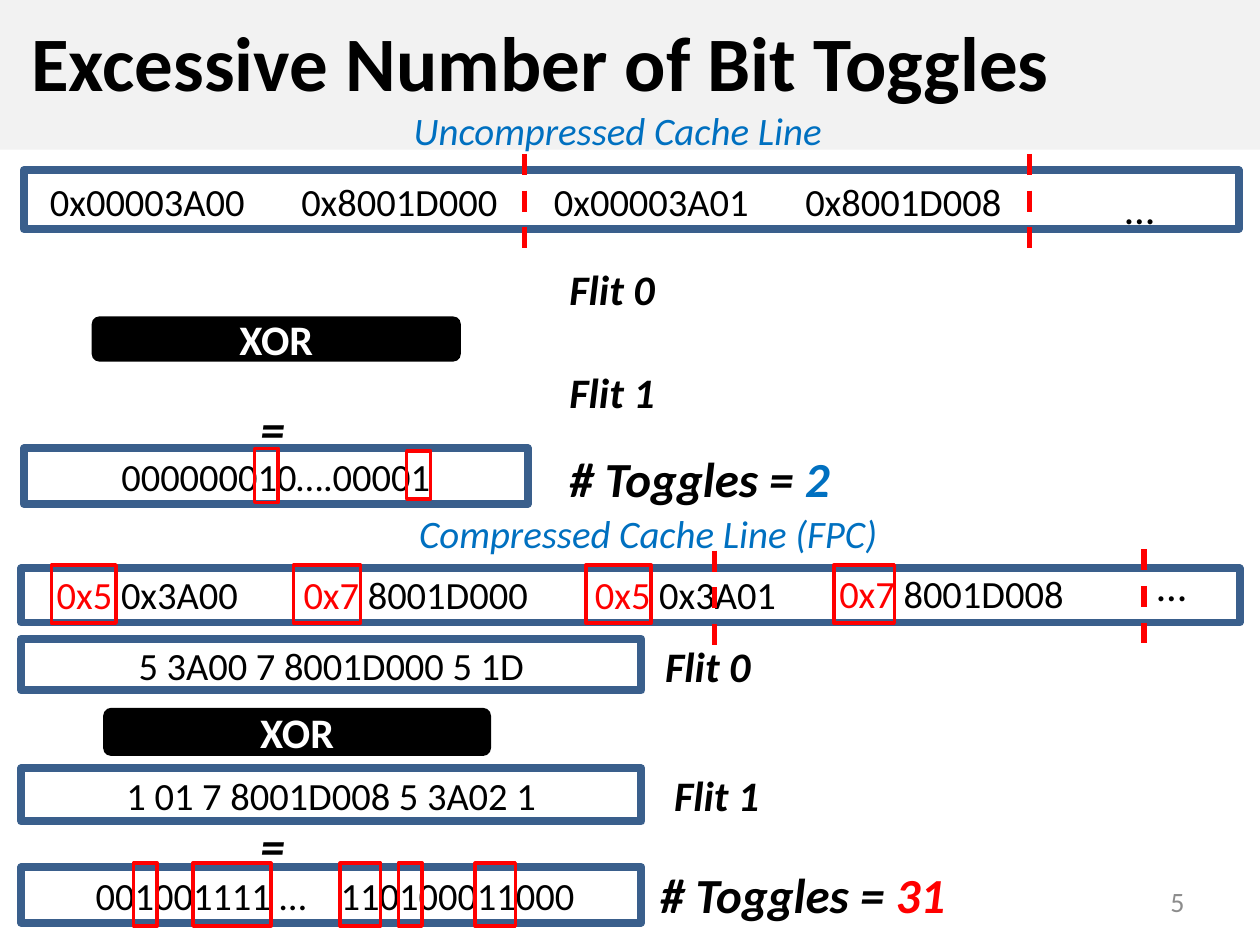
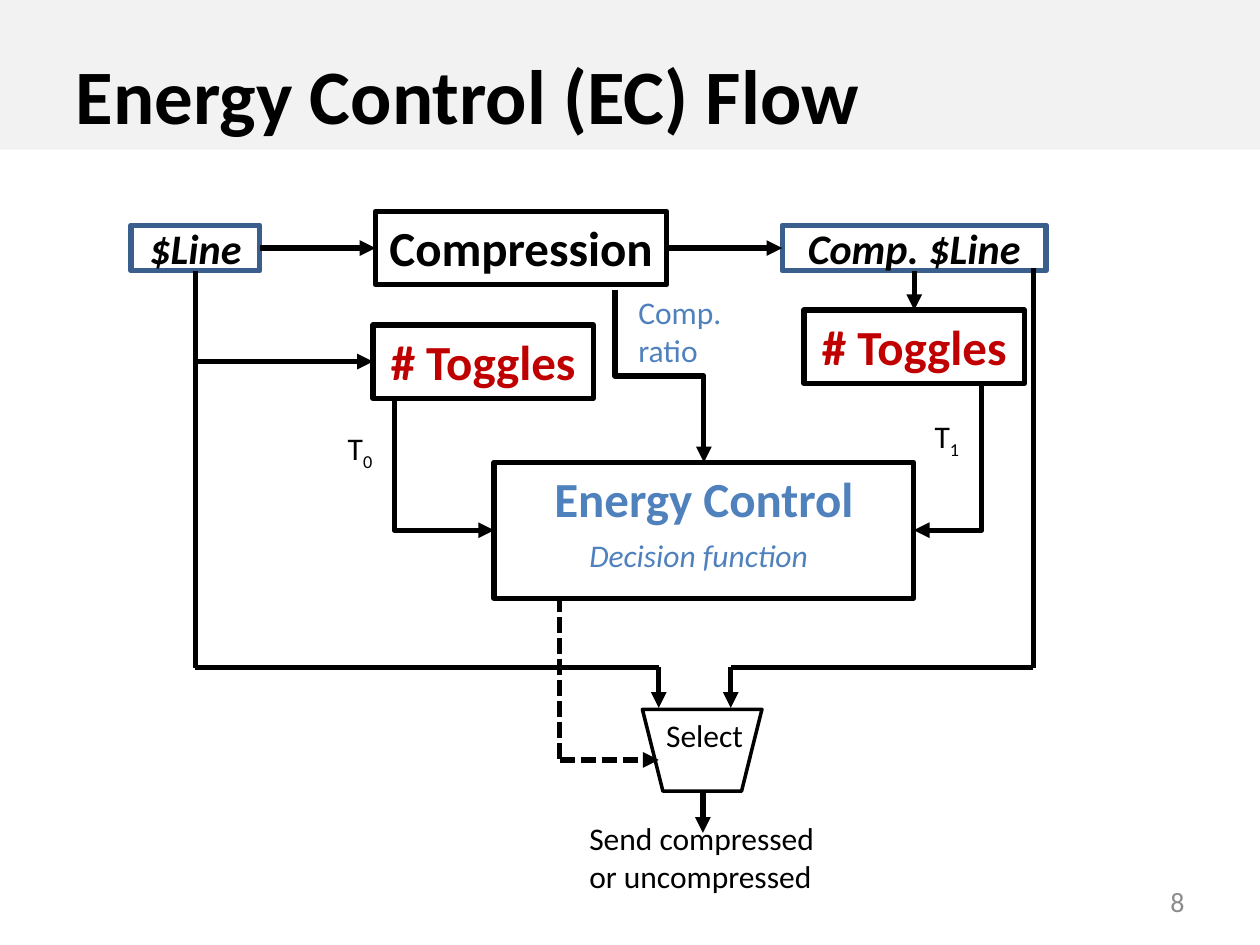
from dataclasses import dataclass, replace
from typing import NamedTuple

from lxml.etree import SubElement
from pptx import Presentation
from pptx.dml.color import RGBColor
from pptx.enum.dml import MSO_LINE
from pptx.enum.shapes import MSO_CONNECTOR, MSO_SHAPE
from pptx.enum.text import MSO_ANCHOR, MSO_AUTO_SIZE, PP_ALIGN
from pptx.oxml.ns import qn
from pptx.util import Cm, Pt

BLACK = RGBColor(0, 0, 0)
WHITE = RGBColor(0xFF, 0xFF, 0xFF)
PALE = RGBColor(0xF2, 0xF2, 0xF2)
GREY = RGBColor(0x8C, 0x8C, 0x8C)
NAVY = RGBColor(0x3A, 0x5F, 0x8C)
BLUE = RGBColor(0x00, 0x70, 0xC0)
STEEL = RGBColor(0x4F, 0x81, 0xBD)
RED = RGBColor(0xFF, 0, 0)
DARK_RED = RGBColor(0xC0, 0, 0)
FONT = "Calibri"


class Run(NamedTuple):
    text: str
    color: RGBColor | None = None
    sub: bool = False


class Area(NamedTuple):
    """Left, top, width and height in centimetres."""
    x: float
    y: float
    w: float
    h: float


@dataclass(frozen=True)
class Style:
    size: float
    color: RGBColor = BLACK
    bold: bool = False
    ital: bool = False
    align: PP_ALIGN = PP_ALIGN.LEFT
    anchor: MSO_ANCHOR = MSO_ANCHOR.TOP
    before: float = 0


@dataclass(frozen=True)
class Look:
    line: RGBColor | None = None
    width: float = 3
    fill: RGBColor | None = None
    kind: MSO_SHAPE = MSO_SHAPE.RECTANGLE


MID = {"align": PP_ALIGN.CENTER, "anchor": MSO_ANCHOR.MIDDLE}
TITLE = Style(44, bold=True, anchor=MSO_ANCHOR.MIDDLE)
PAGE = Style(16, GREY, align=PP_ALIGN.RIGHT, anchor=MSO_ANCHOR.MIDDLE)
WORD = Style(22, **MID)
DOTS = Style(24, **MID)
GATE = Style(24, WHITE, bold=True, **MID)
FLIT = Style(24, bold=True, ital=True)
SUM = replace(FLIT, size=28)
HEAD = Style(22.2, BLUE, ital=True, before=4.4)
ITEM = Style(24, bold=True, ital=True, **MID)
STEP = Style(28, bold=True, align=PP_ALIGN.CENTER)
NOTE = Style(18)

FRAME = Look(NAVY, 4.5)
MARK = Look(RED, 2)
PILL = Look(fill=BLACK, kind=MSO_SHAPE.ROUNDED_RECTANGLE)
DATA = Look(NAVY)
STAGE = Look(BLACK, fill=WHITE)
MUX = Look(BLACK, 2, WHITE, MSO_SHAPE.TRAPEZOID)


# Text
def write(frame, paras: list[list[Run]], style: Style) -> None:
    frame.vertical_anchor = style.anchor
    for num, runs in enumerate(paras):
        para = frame.add_paragraph() if num else frame.paragraphs[0]
        para.alignment = style.align
        para.space_before = Pt(style.before)
        for part in runs:
            run = para.add_run()
            run.text = part.text
            font = run.font
            font.name, font.size = FONT, Pt(style.size)
            font.bold, font.italic = style.bold, style.ital
            font.color.rgb = part.color or style.color
            if part.sub:
                run._r.get_or_add_rPr().set("baseline", "-25000")


def label(slide, area: Area, style: Style, *lines: list[Run], wrap: bool = False):
    frame = slide.shapes.add_textbox(*map(Cm, area)).text_frame
    frame.word_wrap = wrap
    frame.auto_size = MSO_AUTO_SIZE.NONE if wrap else MSO_AUTO_SIZE.SHAPE_TO_FIT_TEXT
    write(frame, list(lines), style)


# Shapes
def box(slide, area: Area, look: Look, text: str = "", style: Style = WORD):
    shape = slide.shapes.add_shape(look.kind, *map(Cm, area))
    shape.shadow.inherit = False
    if look.fill is None:
        shape.fill.background()
    else:
        shape.fill.solid()
        shape.fill.fore_color.rgb = look.fill
    if look.line is None:
        shape.line.fill.background()
    else:
        shape.line.color.rgb = look.line
        shape.line.width = Pt(look.width)
    if text:
        shape.text_frame.word_wrap = True
        write(shape.text_frame, [[Run(text)]], style)
    return shape


# Lines
def ink(line, color: RGBColor, dash: MSO_LINE | None, arrow: bool) -> None:
    line.line.color.rgb = color
    line.line.width = Pt(3)
    if dash is not None:
        line.line.dash_style = dash
    if arrow:
        SubElement(line.line._get_or_add_ln(), qn("a:tailEnd"), type="triangle")
    SubElement(line._element.spPr, qn("a:effectLst"))


def rule(slide, x1: float, y1: float, x2: float, y2: float, color: RGBColor = BLACK,
         dash: MSO_LINE | None = None, arrow: bool = False):
    line = slide.shapes.add_connector(MSO_CONNECTOR.STRAIGHT, *map(Cm, (x1, y1, x2, y2)))
    ink(line, color, dash, arrow)


def join(slide, start, out: int, stop, into: int) -> None:
    line = slide.shapes.add_connector(MSO_CONNECTOR.STRAIGHT, 0, 0, 0, 0)
    line.begin_connect(start, out)
    line.end_connect(stop, into)
    ink(line, BLACK, None, True)


def bend(slide, x1: float, y1: float, x2: float, y2: float, kind: str) -> None:
    """Elbow arrow that leaves downwards: a sideways elbow, turned."""
    mid_x, mid_y = (x1 + x2) / 2, (y1 + y2) / 2
    half_w, half_h = (y2 - y1) / 2, abs(x2 - x1) / 2
    right = x2 > x1
    side = half_w if right else -half_w
    ends = (mid_x + side, mid_y - half_h, mid_x - side, mid_y + half_h)
    line = slide.shapes.add_connector(MSO_CONNECTOR.ELBOW, *map(Cm, ends))
    geom = line._element.spPr
    geom.find(qn("a:prstGeom")).set("prst", kind)
    geom.find(qn("a:xfrm")).set("rot", str((270 if right else 90) * 60000))
    ink(line, BLACK, None, True)


# Shared slide parts
def start(deck, text: str, area: Area, page: str):
    slide = deck.slides.add_slide(deck.slide_layouts[5])
    title = slide.shapes.title
    title.left, title.top, title.width, title.height = map(Cm, area)
    title.text_frame.auto_size = MSO_AUTO_SIZE.NONE
    write(title.text_frame, [[Run(text)]], TITLE)
    label(slide, Area(18.21, 17.65, 5.92, 1.02), PAGE, [Run(page)], wrap=True)
    return slide


def add_band(deck, slide) -> None:
    band = box(slide, Area(0, 0, 25.4, 3.02), Look(fill=PALE))
    deck.slide_layouts[5].shapes._spTree.insert(2, band._element)


def draw_bits(slide) -> None:
    # Captions
    label(slide, Area(7.87, 2.03, 9.17, 1.27), replace(HEAD, align=PP_ALIGN.CENTER),
          [Run("Uncompressed Cache Line")], wrap=True)
    label(slide, Area(8.2, 10.16, 9.83, 1.27), HEAD,
          [Run("Compressed Cache Line (FPC)")], wrap=True)

    # Words of both cache lines
    words = ("0x00003A00", "0x8001D000", "0x00003A01", "0x8001D008")
    for num, word in enumerate(words):
        label(slide, Area(0.43 + 5.08 * num, 3.45, 5.08, 1.19), WORD, [Run(word)], wrap=True)
    for area, code, rest in (
        (Area(0.43, 11.46, 5.08, 1.02), "0x5", " 0x3A00"),
        (Area(5.51, 11.46, 5.74, 1.02), "0x7 ", "8001D000"),
        (Area(11.28, 11.28, 5.08, 1.4), "0x5", " 0x3A01"),
        (Area(16.31, 11.28, 5.74, 1.37), "0x7 ", "8001D008"),
    ):
        label(slide, area, WORD, [Run(code, RED), Run(rest)], wrap=True)
    for area in (Area(20.75, 3.45, 4.45, 1.47), Area(22.07, 11.1, 3.1, 1.37)):
        label(slide, area, DOTS, [Run("…")], wrap=True)

    # Frames
    for area, text in (
        (Area(0.48, 3.43, 24.49, 1.19), ""),
        (Area(0.48, 9.04, 10.16, 1.12), "000000010….00001"),
        (Area(0.43, 11.46, 24.56, 1.09), ""),
        (Area(0.43, 12.88, 12.5, 1.04), "5 3A00 7 8001D000 5 1D"),
        (Area(0.43, 15.49, 12.5, 1.07), "1 01 7 8001D008 5 3A02 1"),
        (Area(0.43, 17.48, 12.5, 1.12), ""),
    ):
        box(slide, area, FRAME, text)
    for x, bits in ((1.68, "001001111 …"), (6.62, "110100011000")):
        label(slide, Area(x, 17.48, 5.6, 1.12), replace(WORD, align=PP_ALIGN.LEFT),
              [Run(bits)], wrap=True)

    # Gates, flits and sums
    for area in (Area(1.85, 6.38, 7.44, 0.91), Area(2.08, 14.27, 7.82, 0.97)):
        box(slide, area, PILL, "XOR", GATE)
    for x, y, text in ((11.23, 5.18, "Flit 0"), (11.23, 7.26, "Flit 1"),
                       (13.16, 12.78, "Flit 0"), (13.34, 15.39, "Flit 1")):
        label(slide, Area(x, y, 2.24, 1.27), FLIT, [Run(text)])
    for y in (7.9, 16.31):
        label(slide, Area(5, y, 1.02, 1.45), SUM, [Run("=")])
    for area, count, color in ((Area(11.23, 8.92, 5.89, 1.45), "2", BLUE),
                               (Area(13.06, 17.3, 6.4, 1.45), "31", RED)):
        label(slide, area, SUM, [Run("# Toggles = "), Run(count, color)])

    # Flit borders
    for x, y in ((10.57, 3.1), (20.75, 3.1), (14.4, 11.1), (23.06, 11.07)):
        rule(slide, x, y, x, y + 1.9, RED, MSO_LINE.DASH)

    # Marked bits and codes
    for y, h, spans in (
        (9.04, 1.09, ((5.13, 0.48),)),
        (9.09, 0.97, ((8.2, 0.48),)),
        (11.39, 1.17, ((1.04, 1.3), (5.92, 1.35), (11.81, 1.32), (16.81, 1.22))),
        (17.4, 1.27, ((2.69, 0.48), (3.89, 1.57), (6.86, 0.81), (8.03, 0.48), (9.58, 0.81))),
    ):
        for x, w in spans:
            box(slide, Area(x, y, w, h), MARK)


def draw_flow(slide) -> None:
    # Boxes
    raw = box(slide, Area(2.64, 4.54, 2.6, 0.92), DATA, "$Line", ITEM)
    pack = box(slide, Area(7.57, 4.26, 5.87, 1.48), STAGE, "Compression", STEP)
    small = box(slide, Area(15.77, 4.54, 5.32, 0.92), DATA, "Comp. $Line", ITEM)
    count = replace(STEP, color=DARK_RED)
    box(slide, Area(7.52, 6.55, 4.44, 1.48), STAGE, "# Toggles", count)
    after = box(slide, Area(16.21, 6.25, 4.44, 1.48), STAGE, "# Toggles", count)
    box(slide, Area(9.96, 9.32, 8.46, 2.74), STAGE, "Energy Control",
        replace(STEP, color=STEEL))
    box(slide, Area(12.95, 14.3, 2.41, 1.65), MUX).rotation = 180

    # Arrows between boxes
    join(slide, raw, 3, pack, 1)
    join(slide, pack, 3, small, 1)
    join(slide, small, 2, after, 0)
    bend(slide, 3.94, 5.46, 7.52, 7.29, "bentConnector2")
    bend(slide, 7.95, 8.05, 9.96, 10.69, "bentConnector2")
    bend(slide, 19.79, 7.75, 18.42, 10.69, "bentConnector2")
    bend(slide, 12.4, 5.84, 14.19, 9.32, "bentConnector3")

    # Both lines into the selector, and its output
    for x, top, port in ((3.94, 7.29, 13.28), (20.83, 5.41, 14.73)):
        rule(slide, x, top, x, 13.46)
        rule(slide, x, 13.46, port, 13.46)
        rule(slide, port, 13.44, port, 14.27, arrow=True)
    rule(slide, 14.17, 15.95, 14.17, 16.79, arrow=True)

    # Decision signal
    rule(slide, 11.28, 12.01, 11.28, 15.32, dash=MSO_LINE.SQUARE_DOT)
    rule(slide, 11.28, 15.32, 13.28, 15.32, dash=MSO_LINE.SQUARE_DOT, arrow=True)

    # Notes
    for x, y, num in ((6.76, 8.53, "0"), (18.59, 8.28, "1")):
        label(slide, Area(x, y, 1.04, 1.02), NOTE, [Run("T"), Run(num, sub=True)])
    label(slide, Area(12.62, 5.79, 2.36, 1.8), replace(NOTE, color=STEEL),
          [Run("Comp.")], [Run("ratio")])
    label(slide, Area(11.63, 10.69, 5.05, 1.02), replace(NOTE, color=STEEL, ital=True),
          [Run("Decision function")])
    label(slide, Area(13.18, 14.3, 2.08, 1.02), NOTE, [Run("Select")])
    label(slide, Area(11.63, 16.38, 5.1, 1.8), NOTE,
          [Run("Send compressed")], [Run("or uncompressed")])


def main() -> None:
    deck = Presentation()
    deck.slide_width, deck.slide_height = Cm(25.4), Cm(19.05)
    bits = start(deck, "Excessive Number of Bit Toggles", Area(0.38, 0.1, 24.54, 2.26), "5")
    add_band(deck, bits)
    draw_bits(bits)
    flow = start(deck, "Energy Control (EC) Flow", Area(1.27, 0.76, 22.86, 2.26), "8")
    draw_flow(flow)
    deck.save("out.pptx")


if __name__ == "__main__":
    main()
